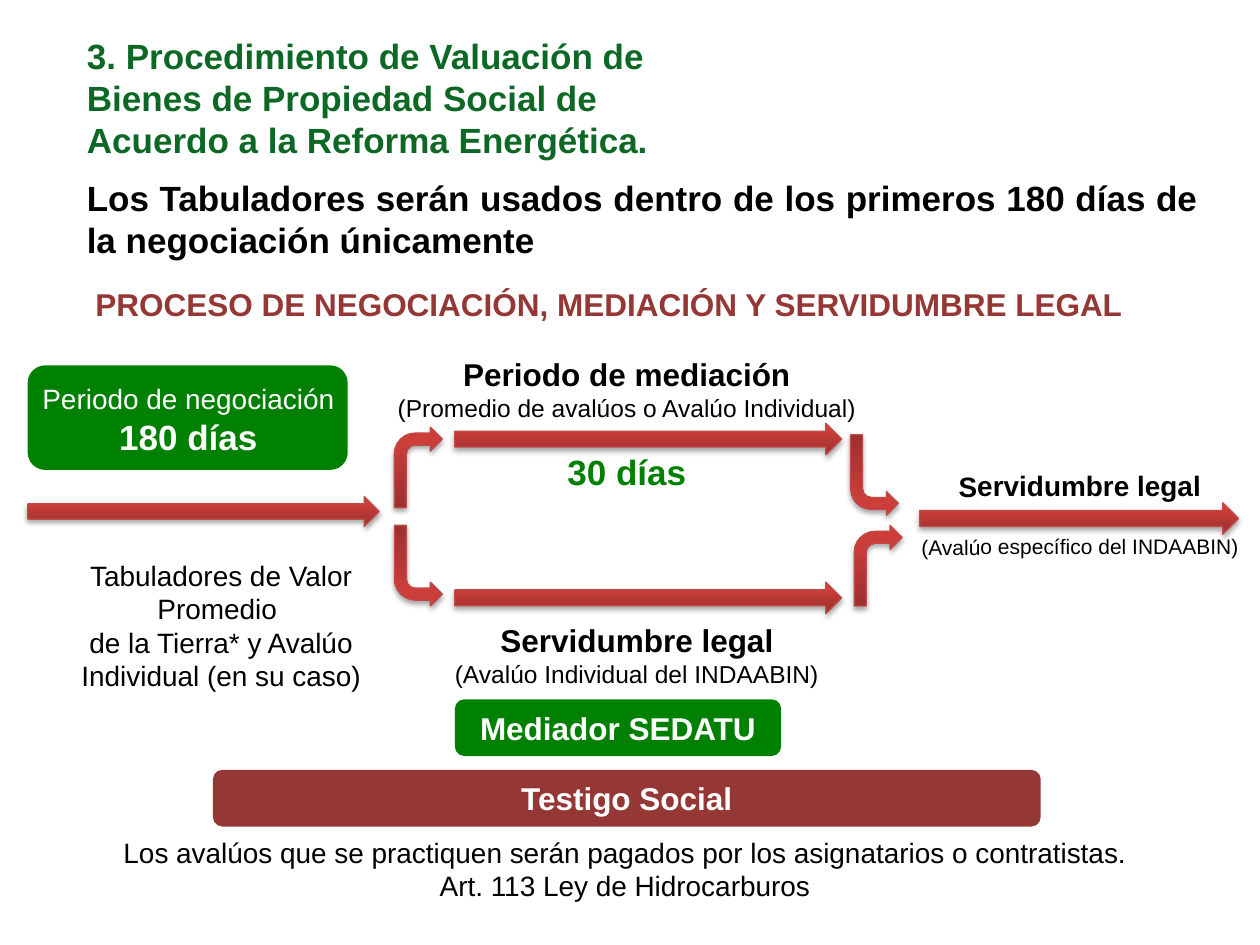
from pptx import Presentation, util as u
from pptx.dml.color import RGBColor
from pptx.enum import shapes, text
from pptx.oxml import parse_xml
from pptx.oxml.ns import nsdecls

PX = 9144  # 100 px to the inch
BLACK = RGBColor(0x00, 0x00, 0x00)
WHITE = RGBColor(0xFF, 0xFF, 0xFF)
GREEN = RGBColor(0x00, 0x80, 0x00)
PINE = RGBColor(0x0D, 0x68, 0x26)
BRICK = RGBColor(0x95, 0x37, 0x35)
EDGE = RGBColor(0xBF, 0x4C, 0x48)
STOPS = [(0, RGBColor(0x9C, 0x2F, 0x2D)), (80, RGBColor(0xCB, 0x3E, 0x3A)),
         (100, RGBColor(0xCE, 0x3B, 0x37))]
KIND = shapes.MSO_SHAPE
ALIGN = text.PP_ALIGN
MID = text.MSO_ANCHOR.MIDDLE
TOP = text.MSO_ANCHOR.TOP


def emu(*box):
    return [n * PX for n in box]


def line(words, size, bold=False, color=BLACK, gap=0):
    font = {"size": u.Pt(size), "bold": bold, "name": "Arial"}
    return words, font, color, gap


def write(shape, lines, align=ALIGN.CENTER, wrap=True, anchor=TOP):
    frame = shape.text_frame
    form = {"word_wrap": wrap, "vertical_anchor": anchor,
            "auto_size": text.MSO_AUTO_SIZE.NONE}
    for key, val in form.items():
        setattr(frame, key, val)
    for i, (words, font, color, gap) in enumerate(lines):
        para = frame.add_paragraph() if i else frame.paragraphs[0]
        para.alignment = align
        if gap:
            para.space_before = u.Pt(gap)
        run = para.add_run()
        run.text = words
        for key, val in font.items():
            setattr(run.font, key, val)
        run.font.color.rgb = color


def label(slide, box, lines, **form):
    shape = slide.shapes.add_textbox(*emu(*box))
    write(shape, lines, **form)
    return shape


def pill(slide, box, color, lines=()):
    shape = slide.shapes.add_shape(KIND.ROUNDED_RECTANGLE, *emu(*box))
    shape.shadow.inherit = False
    shape.fill.solid()
    shape.fill.fore_color.rgb = color
    shape.line.fill.background()
    write(shape, lines, anchor=MID)


def arrow(slide, kind, box, down=False):
    shape = slide.shapes.add_shape(kind, *emu(*box))
    props = shape._element.spPr
    # Red gradient running from bottom to top
    stops = "".join(f'<a:gs pos="{at * 1000}"><a:srgbClr val="{color}"/></a:gs>'
                    for at, color in STOPS)
    props.insert(2, parse_xml(
        f'<a:gradFill {nsdecls("a")} rotWithShape="1"><a:gsLst>{stops}</a:gsLst>'
        '<a:lin ang="16200000" scaled="0"/></a:gradFill>'))
    shape.line.color.rgb = EDGE
    shape.line.width = u.Pt(0.75)
    # Soft shadow below
    props.append(parse_xml(
        f'<a:effectLst {nsdecls("a")}><a:outerShdw blurRad="{u.Pt(3.1)}" '
        f'dist="{u.Pt(1.8)}" dir="5400000" rotWithShape="0"><a:srgbClr val="000000">'
        '<a:alpha val="35000"/></a:srgbClr></a:outerShdw></a:effectLst>'))
    if down:
        shape.rotation = 180
        props.xfrm.set("flipH", "1")


def head(slide, x, y):
    title = slide.shapes.title
    place = dict(zip(("left", "top", "width", "height"), emu(x, y, 480, 111)))
    for key, val in place.items():
        setattr(title, key, val)
    write(title, [line("3. Procedimiento de Valuación de Bienes de Propiedad Social de "
                       "Acuerdo a la Reforma Energética.", 20, True, PINE)],
          align=ALIGN.LEFT)
    label(slide, (x, y + 113, 902, 77),
          [line("Los Tabuladores serán usados dentro de los primeros 180 días de "
                "la negociación únicamente", 20, True)], align=ALIGN.JUSTIFY)
    label(slide, (x - 29, y + 183, 907, 73),
          [line("PROCESO DE NEGOCIACIÓN, MEDIACIÓN Y SERVIDUMBRE LEGAL",
                18, True, BRICK)], anchor=MID)


def deal(slide, x, y):
    """Negotiation stage."""
    pill(slide, (x, y, 254, 83), GREEN)
    label(slide, (x, y + 8, 255, 71),
          [line("Periodo de negociación", 16, color=WHITE),
           line("180 días", 20, True, WHITE)], wrap=False)
    arrow(slide, KIND.RIGHT_ARROW, (x, y + 104, 279, 24))
    label(slide, (x, y + 148, 307, 118),
          [line("Tabuladores de Valor Promedio ", 16),
           line("de la Tierra* y Avalúo Individual (en su caso)", 16)])


def fork(slide, x, y):
    """Mediation and easement branches, with the bends around them."""
    for top in (y, y + 126):
        arrow(slide, KIND.RIGHT_ARROW, (x, top, 307, 25))
    for left, top, down in ((-48, 3, False), (-48, 81, True),
                            (317, 81, False), (314, 9, True)):
        arrow(slide, KIND.BENT_ARROW, (x + left, y + top, 38, 64), down)
    label(slide, (x - 56, y - 59, 385, 121),
          [line("Periodo de mediación", 18, True),
           line("(Promedio de avalúos o Avalúo Individual)", 14),
           line("30 días", 20, True, GREEN, gap=16)], wrap=False)
    label(slide, (x - 11, y + 152, 311, 64),
          [line("Servidumbre legal", 18, True),
           line("(Avalúo Individual del INDAABIN)", 14)], wrap=False)


def close(slide, x, y):
    """Final easement stage."""
    arrow(slide, KIND.RIGHT_ARROW, (x, y, 253, 25))
    note = label(slide, (x - 10, y - 32, 274, 84),
                 [line("Servidumbre legal", 16, True),
                  line("(Avalúo específico del INDAABIN)", 12, gap=18)], wrap=False)
    note.rotation = 359.8


def foot(slide, x, y):
    pill(slide, (x + 339, y, 259, 45), GREEN,
         [line("Mediador SEDATU", 18, True, WHITE)])
    pill(slide, (x + 147, y + 56, 657, 45), BRICK,
         [line("Testigo Social", 18, True, WHITE)])
    label(slide, (x, y + 103, 948, 64),
          [line("Los avalúos que se practiquen serán pagados por los asignatarios "
                "o contratistas.", 16),
           line("Art. 113 Ley de Hidrocarburos", 16)])


def main():
    deck = Presentation()
    deck.slide_width, deck.slide_height = emu(1000, 750)
    slide = deck.slides.add_slide(deck.slide_layouts[5])
    head(slide, 59, 22)
    deal(slide, 22, 290)
    fork(slide, 361, 336)
    close(slide, 730, 399)
    foot(slide, 22, 555)
    deck.save("out.pptx")


if __name__ == "__main__":
    main()
